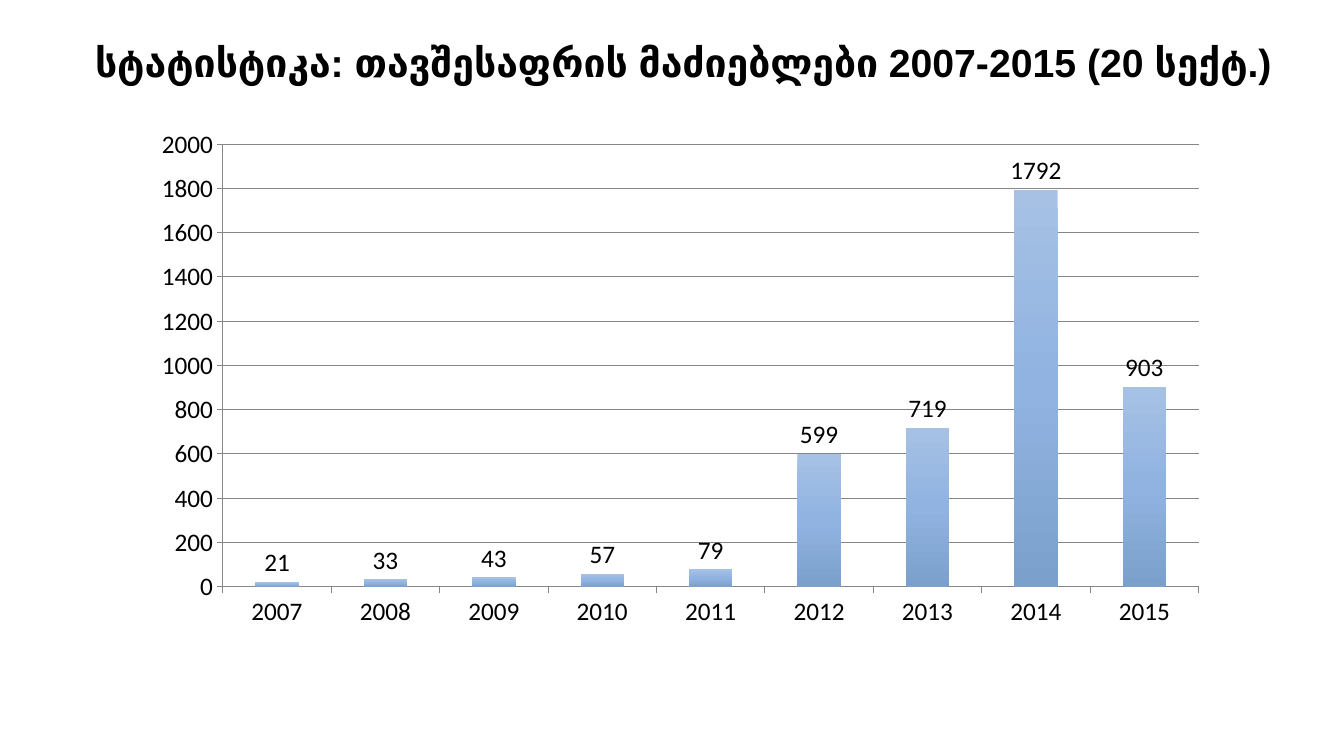
import copy

import pptx
import pptx.chart.data
import pptx.dml.color
import pptx.enum.chart
import pptx.enum.text
import pptx.oxml
import pptx.oxml.ns
import pptx.util

COLOURS = {
    "text": "000000",
    "axis": "868686",
    "bar_top": "A6C1E4",
    "bar_middle": "90B3E1",
    "bar_bottom": "7BA0CB",
}
ASYLUM_SEEKERS = {
    "2007": 21,
    "2008": 33,
    "2009": 43,
    "2010": 57,
    "2011": 79,
    "2012": 599,
    "2013": 719,
    "2014": 1792,
    "2015": 903,
}


class SlideBuilder:
    """Holds the colours and current slide, and adds styled elements to it."""

    def __init__(self, slide, colours):
        self.slide = slide
        self.colours = colours

    def colour(self, name):
        return pptx.dml.color.RGBColor.from_string(self.colours[name])

    def frame(self, *lengths):
        return [pptx.util.Pt(length) for length in lengths]

    def style_font(self, font, name, size, bold=False):
        font.name = name
        font.size = pptx.util.Pt(size)
        font.bold = bold
        font.color.rgb = self.colour("text")

    def title(self, text, left, top, width, height):
        box = self.slide.shapes.add_textbox(*self.frame(left, top, width, height))
        box.text_frame.word_wrap = True
        para = box.text_frame.paragraphs[0]
        para.alignment = pptx.enum.text.PP_ALIGN.CENTER
        span = para.add_run()
        span.text = text
        self.style_font(span.font, "Arial", 28, bold=True)

    def style_line(self, line):
        line.color.rgb = self.colour("axis")
        line.width = pptx.util.Pt(0.75)

    def gradient(self, fill, stops):
        fill.gradient()
        fill.gradient_angle = 270
        first = fill.gradient_stops[0]._gs
        for _ in range(len(stops) - len(fill.gradient_stops)):
            first.addnext(copy.deepcopy(first))
        for stop, (position, name) in zip(fill.gradient_stops, stops):
            stop.position = position
            stop.color.rgb = self.colour(name)

    def plot_layout(self, chart, **fractions):
        plot_area = chart._chartSpace.chart.plotArea
        for layout in plot_area.findall(pptx.oxml.ns.qn("c:layout")):
            plot_area.remove(layout)
        settings = {"layoutTarget": "inner", "xMode": "edge", "yMode": "edge", **fractions}
        parts = "".join(f'<c:{key} val="{value}"/>' for key, value in settings.items())
        plot_area.insert(0, pptx.oxml.parse_xml(
            f'<c:layout {pptx.oxml.ns.nsdecls("c")}>'
            f"<c:manualLayout>{parts}</c:manualLayout></c:layout>"
        ))

    def column_chart(self, values, left, top, width, height):
        data = pptx.chart.data.CategoryChartData()
        data.categories = list(values)
        data.add_series("Series 1", list(values.values()))
        chart = self.slide.shapes.add_chart(
            pptx.enum.chart.XL_CHART_TYPE.COLUMN_CLUSTERED,
            *self.frame(left, top, width, height),
            data,
        ).chart
        chart.has_title = False
        chart.has_legend = False
        self.style_font(chart.font, "Calibri", 18)

        for axis in (chart.category_axis, chart.value_axis):
            axis.major_tick_mark = pptx.enum.chart.XL_TICK_MARK.OUTSIDE
            axis.minor_tick_mark = pptx.enum.chart.XL_TICK_MARK.NONE
            self.style_line(axis.format.line)
        chart.category_axis.has_major_gridlines = False
        chart.value_axis.has_major_gridlines = True
        self.style_line(chart.value_axis.major_gridlines.format.line)
        chart.value_axis.minimum_scale = 0
        chart.value_axis.maximum_scale = 2000
        chart.value_axis.major_unit = 200

        plot = chart.plots[0]
        plot.vary_by_categories = False
        plot.gap_width = 150
        plot.has_data_labels = True
        labels = plot.data_labels
        labels.show_value = True
        labels.position = pptx.enum.chart.XL_LABEL_POSITION.OUTSIDE_END
        self.style_font(labels.font, "Calibri", 18)
        self.gradient(
            plot.series[0].format.fill,
            [(0, "bar_top"), (0.5, "bar_middle"), (1, "bar_bottom")],
        )
        self.plot_layout(chart, x=0.1, y=0.035, w=0.88, h=0.85)


def main():
    deck = pptx.Presentation()
    deck.slide_width = pptx.util.Pt(960)
    deck.slide_height = pptx.util.Pt(540)
    page = deck.slides.add_slide(deck.slide_layouts[6])
    builder = SlideBuilder(page, COLOURS)
    builder.title(
        "სტატისტიკა: თავშესაფრის მაძიებლები 2007-2015 (20 სექტ.)", 32, 24, 912, 36
    )
    builder.column_chart(ASYLUM_SEEKERS, 80, 90, 792, 372)
    deck.save("out.pptx")


if __name__ == "__main__":
    main()
